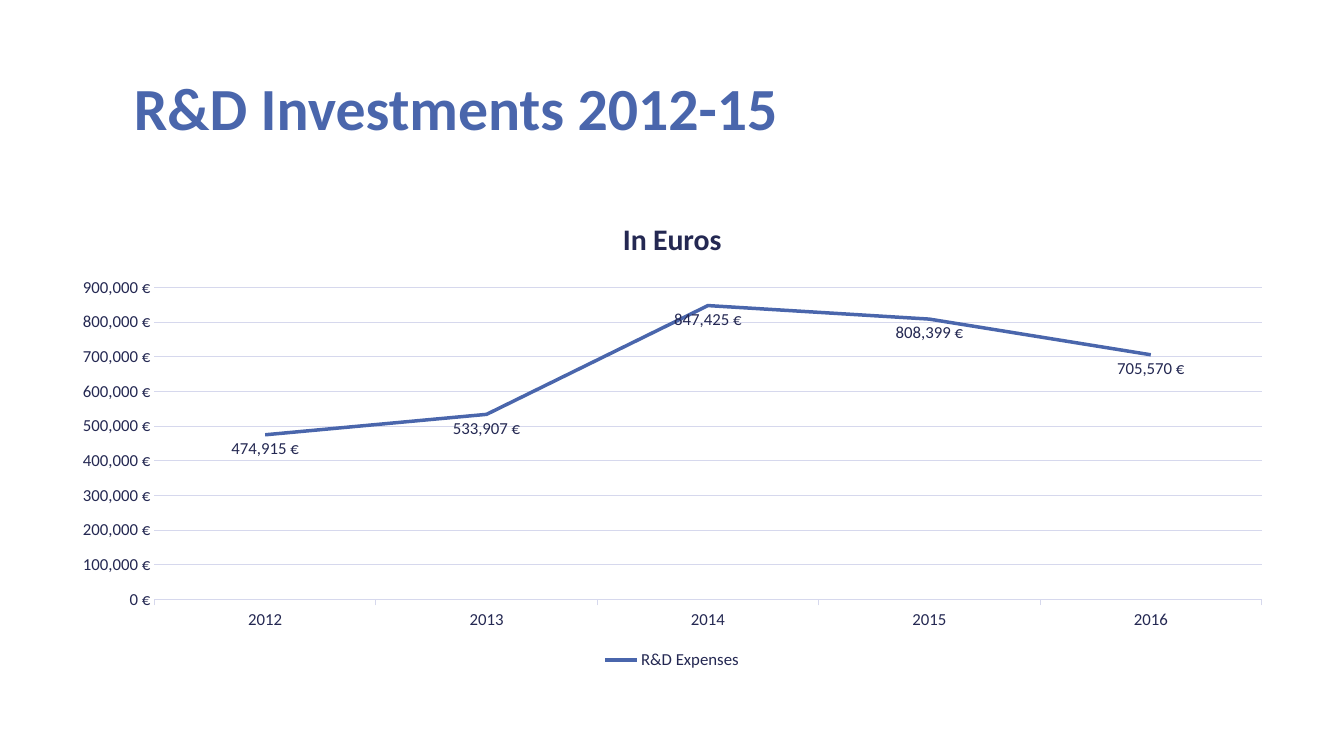
"""Build the R&D investments slide with its line chart."""
from dataclasses import dataclass

import pptx
import pptx.chart.data
import pptx.dml.color
import pptx.enum.chart
import pptx.enum.text
import pptx.util


@dataclass(frozen=True)
class Theme:
    """Hold the colours, font and type sizes of the slide."""

    accent: str = "4A66AC"
    ink: str = "242852"
    rule: str = "D6D8ED"
    font: str = "Calibri"
    title_size: float = 42.7
    heading_size: float = 21.3
    label_size: float = 12
    rule_width: float = 0.75
    series_width: float = 2.5
    euros: str = '#,##0\\ "€"'


class SlideBuilder:
    """Place styled elements on the current slide."""

    def __init__(self, slide, theme):
        """Keep the slide and the theme."""
        self.slide = slide
        self.theme = theme

    def style_font(self, font, size, color, bold=False):
        """Apply typeface, size, colour and weight."""
        font.name = self.theme.font
        font.size = pptx.util.Pt(size)
        font.bold = bold
        font.color.rgb = pptx.dml.color.RGBColor.from_string(color)

    def style_label(self, font):
        """Apply the small chart text style."""
        self.style_font(font, self.theme.label_size, self.theme.ink)

    def style_line(self, line, color, width):
        """Apply line colour and width."""
        line.color.rgb = pptx.dml.color.RGBColor.from_string(color)
        line.width = pptx.util.Pt(width)

    def add_title(self, text, left, top, width, height):
        """Move, fill and format the title placeholder."""
        title = self.slide.shapes.title
        title.left, title.top, title.width, title.height = left, top, width, height
        frame = title.text_frame
        frame.text = text
        frame.word_wrap = True
        frame.auto_size = pptx.enum.text.MSO_AUTO_SIZE.NONE
        frame.vertical_anchor = pptx.enum.text.MSO_ANCHOR.BOTTOM
        para = frame.paragraphs[0]
        para.alignment = pptx.enum.text.PP_ALIGN.LEFT
        para.line_spacing = 0.8
        para.space_before = pptx.util.Pt(0)
        self.style_font(para.runs[0].font, self.theme.title_size, self.theme.accent, True)

    def add_line_chart(self, heading, name, values, left, top, width, height):
        """Add a labelled line chart of one series in euros."""
        data = pptx.chart.data.CategoryChartData(number_format=self.theme.euros)
        data.categories = list(values)
        data.add_series(name, list(values.values()))
        chart = self.slide.shapes.add_chart(
            pptx.enum.chart.XL_CHART_TYPE.LINE, left, top, width, height, data
        ).chart
        self.style_label(chart.font)
        chart.has_title = True
        chart.chart_title.include_in_layout = False
        frame = chart.chart_title.text_frame
        frame.text = heading
        self.style_font(
            frame.paragraphs[0].runs[0].font, self.theme.heading_size, self.theme.ink, True
        )
        chart.has_legend = True
        chart.legend.position = pptx.enum.chart.XL_LEGEND_POSITION.BOTTOM
        chart.legend.include_in_layout = False
        self.style_label(chart.legend.font)
        self.style_axes(chart)
        self.style_series(chart.plots[0])

    def style_axes(self, chart):
        """Format both axes and the gridlines."""
        theme = self.theme
        marks = pptx.enum.chart.XL_TICK_MARK
        for axis, mark in (
            (chart.category_axis, marks.OUTSIDE),
            (chart.value_axis, marks.NONE),
        ):
            axis.major_tick_mark = mark
            axis.minor_tick_mark = marks.NONE
            self.style_label(axis.tick_labels.font)
        self.style_line(chart.category_axis.format.line, theme.rule, theme.rule_width)
        amounts = chart.value_axis
        amounts.minimum_scale = 0
        amounts.maximum_scale = 900000
        amounts.major_unit = 100000
        amounts.format.line.fill.background()
        self.style_line(amounts.major_gridlines.format.line, theme.rule, theme.rule_width)
        amounts.tick_labels.number_format = theme.euros
        amounts.tick_labels.number_format_is_linked = False

    def style_series(self, plot):
        """Format the line and its data labels."""
        plot.vary_by_categories = False
        series = plot.series[0]
        series.smooth = False
        series.marker.style = pptx.enum.chart.XL_MARKER_STYLE.NONE
        self.style_line(series.format.line, self.theme.accent, self.theme.series_width)
        labels = series.data_labels
        labels.show_value = True
        labels.position = pptx.enum.chart.XL_LABEL_POSITION.BELOW
        labels.number_format = self.theme.euros
        labels.number_format_is_linked = False
        self.style_label(labels.font)


def main():
    """Create the deck and save it."""
    cm = pptx.util.Cm
    deck = pptx.Presentation()
    deck.slide_width, deck.slide_height = cm(33.87), cm(19.05)
    page = SlideBuilder(deck.slides.add_slide(deck.slide_layouts[5]), Theme())
    page.add_title("R&D Investments 2012-15", cm(3.12), cm(1.93), cm(24.82), cm(1.78))
    expenses = {
        "2012": 474915,
        "2013": 533907,
        "2014": 847425,
        "2015": 808399,
        "2016": 705570,
    }
    page.add_line_chart(
        "In Euros", "R&D Expenses", expenses, cm(1.47), cm(5), cm(30.94), cm(11.99)
    )
    deck.save("out.pptx")


if __name__ == "__main__":
    main()
